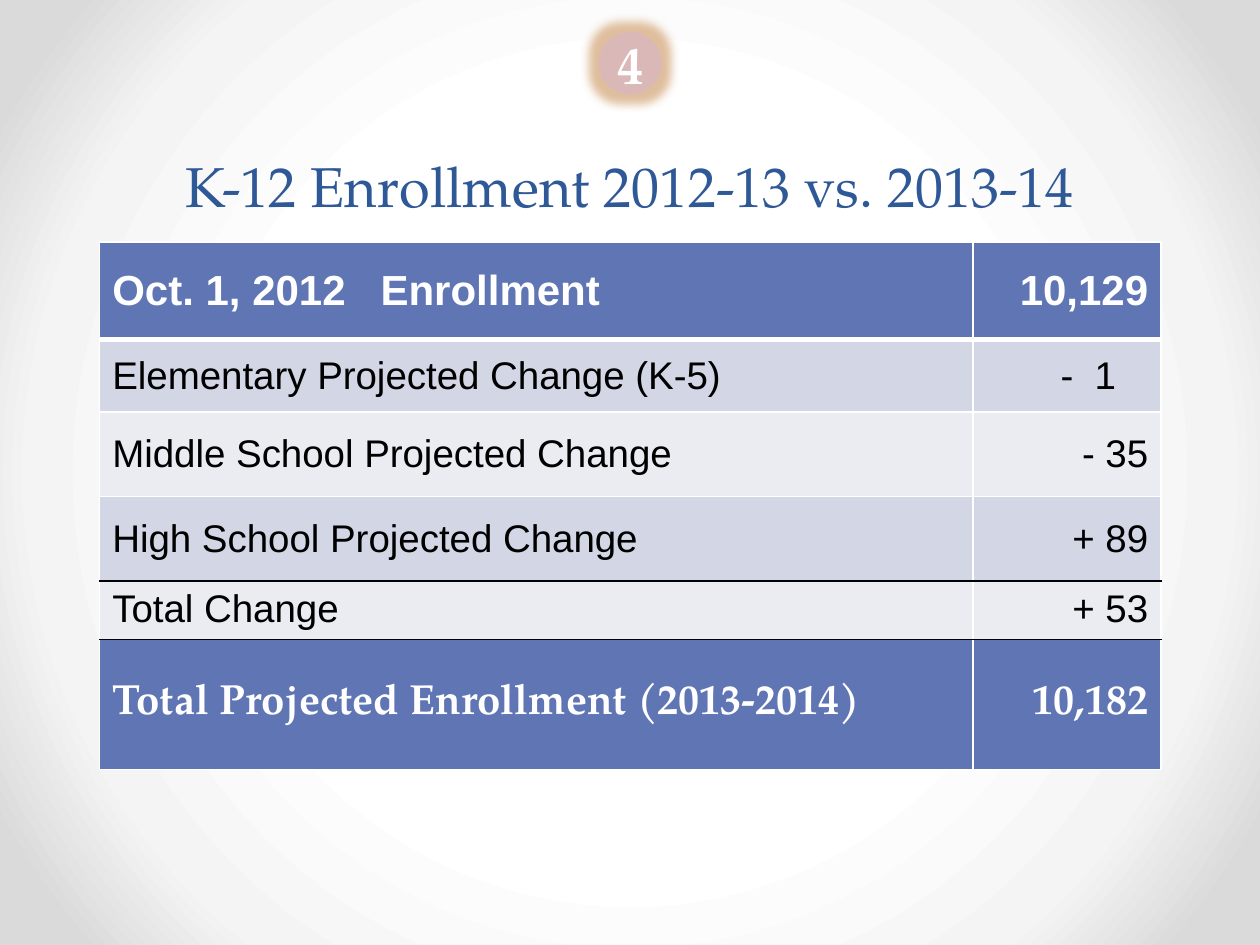
import pptx
import pptx.util
import pptx.dml.color
import pptx.enum.shapes
import pptx.enum.text
import pptx.oxml
import pptx.oxml.ns

Cm = pptx.util.Cm
Pt = pptx.util.Pt
ALIGN = pptx.enum.text.PP_ALIGN
ANCHOR = pptx.enum.text.MSO_ANCHOR

COLORS = {
    "title": "2F5897", "accent": "6076B4", "band_dark": "D2D6E5",
    "band_light": "EAECF2", "white": "FFFFFF", "black": "000000",
    "badge": "DAB8B8", "glow": "E0BF9E", "mist": "F4F4F4", "edge": "DADADA",
}
SERIF = "TeX Gyre Pagella"
SANS = "Arial"


def rgb(name):
    return pptx.dml.color.RGBColor.from_string(COLORS[name])


def make_element(tag, content):
    """Build a drawing element from its tag and inner XML."""
    names = pptx.oxml.ns.nsdecls("a", "p")
    name = tag.split()[0]
    return pptx.oxml.parse_xml(f"<{tag} {names}>{content}</{name}>")


def write_text(frame, text, size=22, font=SANS, color="black", bold=False,
               align=ALIGN.LEFT, line_spacing=None):
    frame.word_wrap = True
    para = frame.paragraphs[0]
    para.alignment = align
    if line_spacing:
        para.line_spacing = Pt(line_spacing)
    span = para.add_run()
    span.text = text
    span.font.size = Pt(size)
    span.font.name = font
    span.font.bold = bold
    span.font.color.rgb = rgb(color)


def paint_background(page):
    stops = "".join(
        f'<a:gs pos="{position * 1000}"><a:srgbClr val="{COLORS[name]}"/></a:gs>'
        for position, name in ((50, "white"), (76, "mist"), (92, "edge")))
    gradient = make_element(
        "a:gradFill rotWithShape=\"1\"",
        f'<a:gsLst>{stops}</a:gsLst><a:path path="circle">'
        '<a:fillToRect l="50000" t="50000" r="50000" b="50000"/></a:path>')
    page.background.fill.solid()
    plain = page.element.xpath("p:cSld/p:bg/p:bgPr/a:solidFill")[0]
    plain.getparent().replace(plain, gradient)


def add_title(page, left, top, width, height):
    box = page.shapes.add_textbox(left, top, width, height)
    box.text_frame.vertical_anchor = ANCHOR.MIDDLE
    write_text(box.text_frame, "K-12 Enrollment 2012-13 vs. 2013-14", size=32,
               font=SERIF, color="title", align=ALIGN.CENTER, line_spacing=58)


def add_border(cell, side, color, width):
    line = make_element(
        f'a:ln{side} w="{Pt(width)}"',
        f'<a:solidFill><a:srgbClr val="{COLORS[color]}"/></a:solidFill>')
    cell._tc.get_or_add_tcPr().append(line)


def add_enrollment_table(page, left, top, width, height):
    header = {"size": 24, "color": "white", "bold": True}
    footer = {**header, "font": SERIF}
    # Label, value, row height in cm, fill, text format
    rows = [
        ("Oct. 1, 2012   Enrollment", "10,129", 1.96, "accent", header),
        ("Elementary Projected Change (K-5)", "-  1", 1.47, "band_dark", {}),
        ("Middle School Projected Change", "- 35", 1.7, "band_light", {}),
        ("High School Projected Change", "+ 89", 1.7, "band_dark", {}),
        ("Total Change", "+ 53", 1.04, "band_light", {}),
        ("Total Projected Enrollment (2013-2014)", "10,182", 2.62, "accent", footer),
    ]
    # Horizontal rules, from above the first row to below the last
    rules = [("white", 1), ("white", 3), ("white", 1), ("white", 1),
             ("black", 1), ("black", 1), ("white", 1)]
    table = page.shapes.add_table(len(rows), 2, left, top, width, height).table
    table.columns[0].width = Cm(17.6)
    table.columns[1].width = width - Cm(17.6)

    for index, (label, value, row_height, fill, style) in enumerate(rows):
        table.rows[index].height = Cm(row_height)
        for column, (text, align) in enumerate(((label, ALIGN.LEFT),
                                                (value, ALIGN.RIGHT))):
            cell = table.cell(index, column)
            for side, rule in zip("LRTB", (("white", 1), ("white", 1),
                                           rules[index], rules[index + 1])):
                add_border(cell, side, *rule)
            cell.fill.solid()
            cell.fill.fore_color.rgb = rgb(fill)
            cell.vertical_anchor = (ANCHOR.TOP if label == "Total Change"
                                    else ANCHOR.MIDDLE)
            write_text(cell.text_frame, text, align=align, **style)
    # The single-digit change sits further in from the edge
    table.cell(1, 1).margin_right = Cm(0.9)


def add_page_badge(page, left, top, size):
    badge = page.shapes.add_shape(pptx.enum.shapes.MSO_SHAPE.OVAL,
                                  left, top, size, size)
    badge.fill.solid()
    badge.fill.fore_color.rgb = rgb("badge")
    badge.line.fill.background()
    # Soft halo, which also takes the place of the shadow
    badge._element.spPr.append(make_element(
        "a:effectLst", f'<a:glow rad="{Pt(11)}">'
        f'<a:srgbClr val="{COLORS["glow"]}"/></a:glow>'))
    frame = badge.text_frame
    frame.margin_left = frame.margin_right = 0
    frame.margin_top = frame.margin_bottom = 0
    frame.vertical_anchor = ANCHOR.MIDDLE
    write_text(frame, "4", size=30, font=SERIF, color="white", bold=True,
               align=ALIGN.CENTER)


def main():
    deck = pptx.Presentation()
    deck.slide_width, deck.slide_height = Cm(25.4), Cm(19.05)
    page = deck.slides.add_slide(deck.slide_layouts[6])
    paint_background(page)
    add_title(page, Cm(3.28), Cm(2.54), Cm(18.85), Cm(1.7))
    add_enrollment_table(page, Cm(2.01), Cm(4.88), Cm(21.39), Cm(10.49))
    add_page_badge(page, Cm(12.07), Cm(0.64), Cm(1.27))
    deck.save("out.pptx")


if __name__ == "__main__":
    main()
